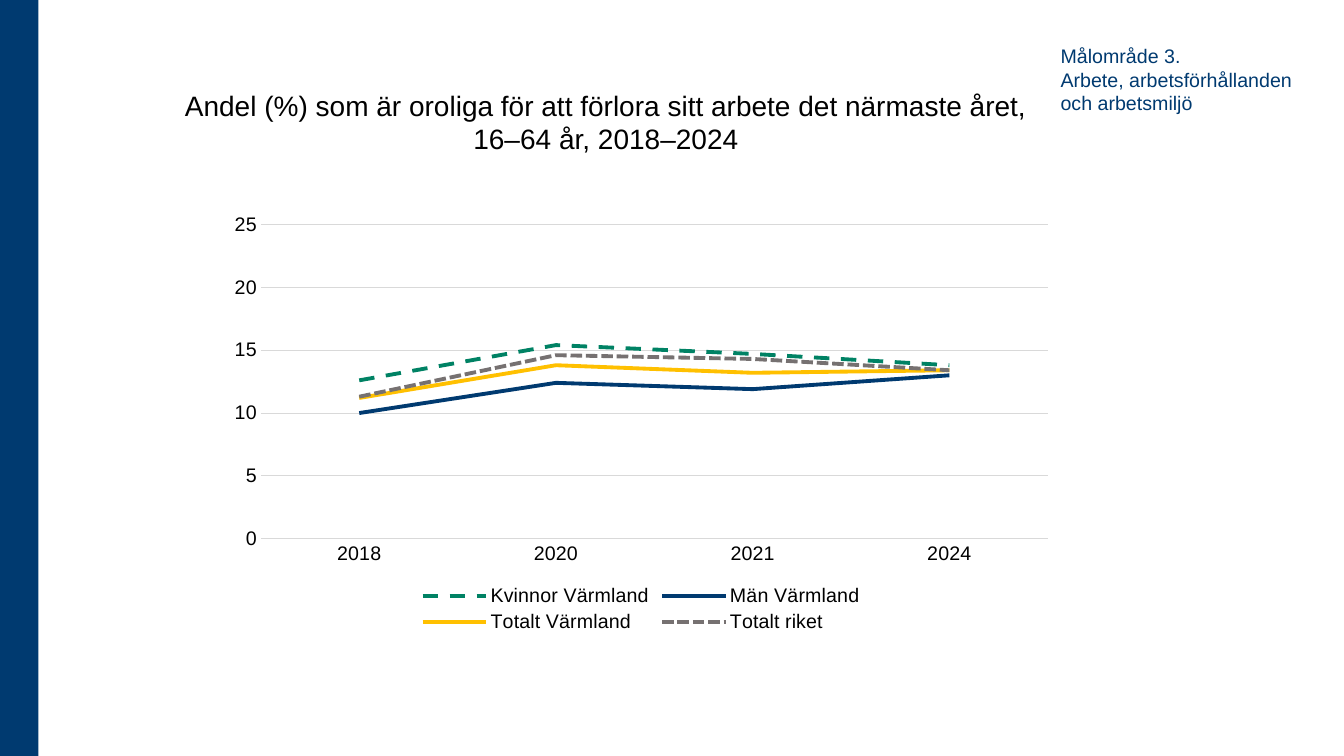
from pptx import Presentation
from pptx.chart.data import CategoryChartData
from pptx.dml.color import RGBColor
from pptx.enum.chart import XL_CHART_TYPE, XL_LEGEND_POSITION, XL_MARKER_STYLE, XL_TICK_MARK
from pptx.enum.dml import MSO_LINE
from pptx.enum.shapes import MSO_SHAPE
from pptx.enum.text import MSO_ANCHOR, PP_ALIGN
from pptx.util import Inches, Pt

RECT = MSO_SHAPE.RECTANGLE
LINE = XL_CHART_TYPE.LINE
BOTTOM = XL_LEGEND_POSITION.BOTTOM
BARE = XL_MARKER_STYLE.NONE
NO_TICK = XL_TICK_MARK.NONE
SOLID, DASH, SHORT = MSO_LINE.SOLID, MSO_LINE.DASH, MSO_LINE.SQUARE_DOT
LOW, TOP = MSO_ANCHOR.BOTTOM, MSO_ANCHOR.TOP
LEFT, CENTER = PP_ALIGN.LEFT, PP_ALIGN.CENTER
NAVY, BLACK, GREY = "003A70", "000000", "D9D9D9"


def color(code):
    return RGBColor.from_string(code)


def style(font, size, code):
    font.name = "Arial"
    font.size = Pt(size)
    font.color.rgb = color(code)


deck = Presentation()
deck.slide_width, deck.slide_height = Inches(13.33), Inches(7.5)
slide = deck.slides.add_slide(deck.slide_layouts[6])

band = slide.shapes.add_shape(RECT, 0, 0, Inches(0.38), Inches(7.5))
band.shadow.inherit = False
band.fill.solid()
band.fill.fore_color.rgb = color(NAVY)
band.line.fill.background()

texts = [
    ("Andel (%) som är oroliga för att förlora sitt arbete det närmaste året, 16–64 år, 2018–2024",
     (1.69, 0.69, 8.64, 0.9), 20, BLACK, CENTER, LOW),
    ("Målområde 3.\nArbete, arbetsförhållanden och arbetsmiljö",
     (10.42, 0.39, 2.55, 0.81), 14, NAVY, LEFT, TOP),
]
for words, place, size, code, align, anchor in texts:
    frame = slide.shapes.add_textbox(*map(Inches, place)).text_frame
    frame.word_wrap = True
    frame.vertical_anchor = anchor
    frame.text = words
    for para in frame.paragraphs:
        para.alignment = align
        style(para.runs[0].font, size, code)

groups = [
    ("Kvinnor Värmland", (12.6, 15.4, 14.7, 13.8), "008264", DASH),
    ("Män Värmland", (10, 12.4, 11.9, 13), NAVY, SOLID),
    ("Totalt Värmland", (11.2, 13.8, 13.2, 13.4), "FFC000", SOLID),
    ("Totalt riket", (11.3, 14.6, 14.3, 13.4), "767171", SHORT),
]
data = CategoryChartData()
data.categories = ["2018", "2020", "2021", "2024"]
for name, values, code, dash in groups:
    data.add_series(name, values)

place = map(Inches, (2.16, 2.03, 8.4, 4.29))
chart = slide.shapes.add_chart(LINE, *place, data).chart
style(chart.font, 14, BLACK)
chart.has_title = False
chart.has_legend = True
chart.legend.position = BOTTOM
chart.legend.include_in_layout = False
style(chart.legend.font, 14, BLACK)

plot = chart.plots[0]
plot.vary_by_categories = False
for series, (name, values, code, dash) in zip(plot.series, groups):
    series.smooth = False
    series.marker.style = BARE
    line = series.format.line
    line.width = Pt(2.75)
    line.color.rgb = color(code)
    line.dash_style = dash

years, share = chart.category_axis, chart.value_axis
for axis in (years, share):
    axis.major_tick_mark = axis.minor_tick_mark = NO_TICK
    style(axis.tick_labels.font, 14, BLACK)
share.minimum_scale, share.maximum_scale, share.major_unit = 0, 25, 5
share.has_major_gridlines = True
share.format.line.fill.background()
for line in (years.format.line, share.major_gridlines.format.line):
    line.width = Pt(0.75)
    line.color.rgb = color(GREY)

deck.save("out.pptx")
